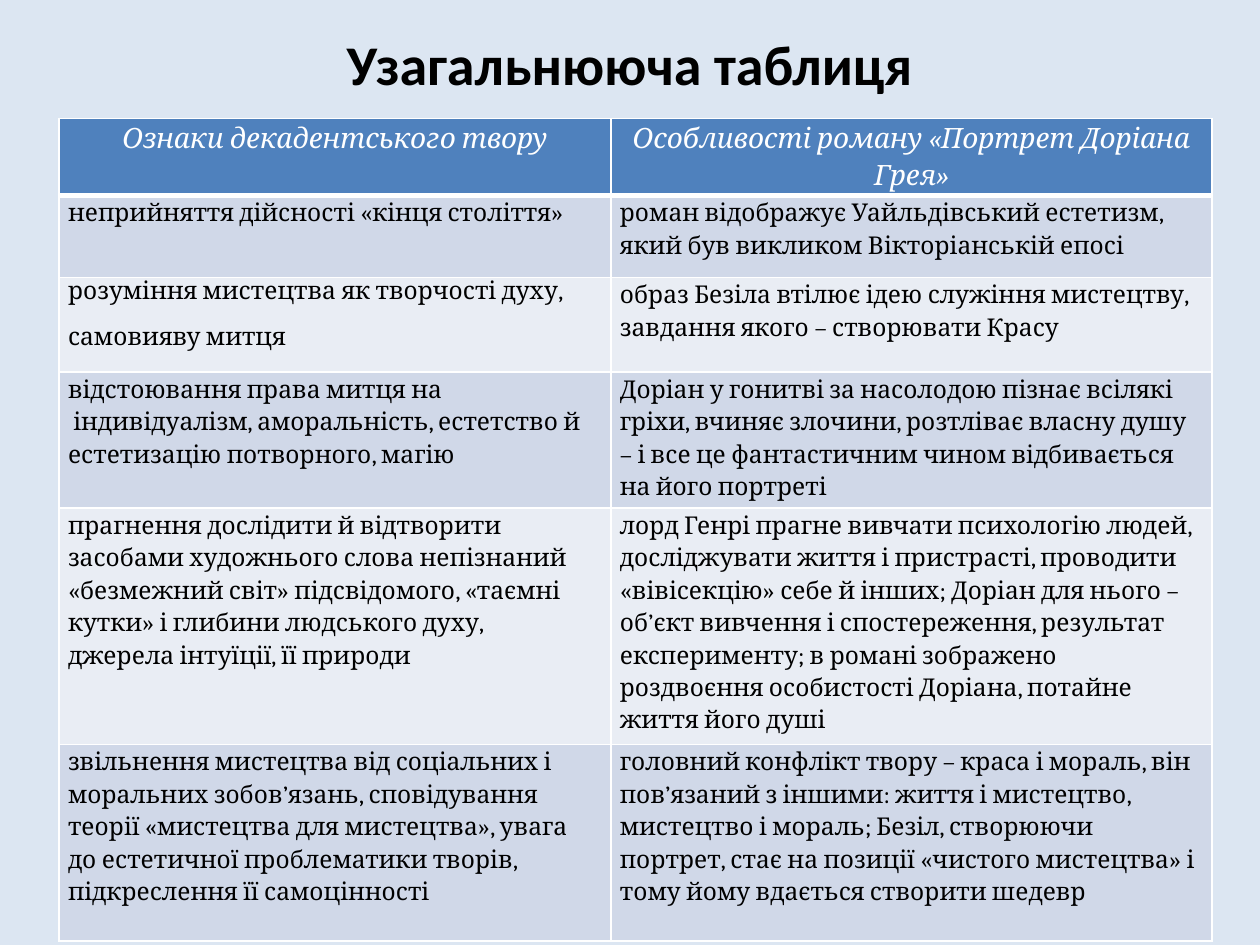
"""Builds a slide with a summary table on decadent writing."""
from dataclasses import dataclass

from lxml.etree import SubElement
from pptx import Presentation
from pptx.dml.color import RGBColor
from pptx.enum.text import MSO_ANCHOR, PP_ALIGN
from pptx.oxml.ns import qn
from pptx.util import Inches, Pt

LOOSE = {"space_after": Pt(10)}
TIGHT = {"line_spacing": 1.15}
SPACED = {**TIGHT, **LOOSE}

HEADINGS = ["Ознаки декадентського твору", "Особливості роману «Портрет Доріана Грея»"]
ROWS = [
    (["неприйняття дійсності «кінця століття»"], SPACED,
     "роман відображує Уайльдівський естетизм, який був викликом Вікторіанській епосі"),
    (["розуміння мистецтва як творчості духу,", "самовияву митця"], LOOSE,
     "образ Безіла втілює ідею служіння мистецтву, завдання якого – створювати Красу"),
    (["відстоювання права митця на",
      " індивідуалізм, аморальність, естетство й",
      "естетизацію потворного, магію"], TIGHT,
     "Доріан у гонитві за насолодою пізнає всілякі гріхи, вчиняє злочини, розтліває "
     "власну душу – і все це фантастичним чином відбивається на його портреті"),
    (["прагнення дослідити й відтворити",
      "засобами художнього слова непізнаний",
      "«безмежний світ» підсвідомого, «таємні",
      "кутки» і глибини людського духу,",
      "джерела інтуїції, її природи"], TIGHT,
     "лорд Генрі прагне вивчати психологію людей, досліджувати життя і пристрасті, "
     "проводити «вівісекцію» себе й інших; Доріан для нього – об’єкт вивчення і "
     "спостереження, результат експерименту; в романі зображено роздвоєння "
     "особистості Доріана, потайне життя його душі"),
    (["звільнення мистецтва від соціальних і",
      "моральних зобов’язань, сповідування",
      "теорії «мистецтва для мистецтва», увага",
      "до естетичної проблематики творів,",
      "підкреслення її самоцінності"], TIGHT,
     "головний конфлікт твору – краса і мораль, він пов’язаний з іншими: життя і "
     "мистецтво, мистецтво і мораль; Безіл, створюючи портрет, стає на позиції "
     "«чистого мистецтва» і тому йому вдається створити шедевр"),
]


@dataclass(frozen=True)
class Theme:
    background: str = "DCE6F2"
    header: str = "4F81BD"
    bands: tuple = ("D0D8E8", "E9EDF4")
    light: str = "FFFFFF"
    dark: str = "000000"
    title_font: str = "Calibri"
    table_font: str = "Cambria"
    title_size: int = 32
    header_size: int = 16
    body_size: int = 14
    rule: int = 1
    header_rule: int = 3


class SlideBuilder:
    def __init__(self, slide, theme):
        self.slide = slide
        self.theme = theme
        self.paint(slide.background.fill, theme.background)

    def paint(self, fill, color):
        fill.solid()
        fill.fore_color.rgb = RGBColor.from_string(color)

    def text(self, frame, lines, color, font, layout, hanging=0):
        for index, line in enumerate(lines):
            paragraph = frame.paragraphs[0] if index == 0 else frame.add_paragraph()
            paragraph.text = line
            if hanging:
                properties = paragraph._p.get_or_add_pPr()
                properties.set("marL", str(Inches(hanging)))
                properties.set("indent", str(-Inches(hanging)))
            for name, value in layout.items():
                setattr(paragraph, name, value)
            for name, value in font.items():
                setattr(paragraph.font, name, value)
            paragraph.font.color.rgb = RGBColor.from_string(color)

    def title(self, wording, left, top, width, height):
        frame = self.slide.shapes.add_textbox(
            Inches(left), Inches(top), Inches(width), Inches(height)).text_frame
        frame.word_wrap = True
        frame.vertical_anchor = MSO_ANCHOR.MIDDLE
        font = {"name": self.theme.title_font, "size": Pt(self.theme.title_size),
                "bold": True}
        self.text(frame, [wording], self.theme.dark, font,
                  {"alignment": PP_ALIGN.CENTER})

    def borders(self, cell, bottom):
        properties = cell._tc.get_or_add_tcPr()
        rule = self.theme.rule
        for side, width in {"L": rule, "R": rule, "T": rule, "B": bottom}.items():
            line = SubElement(properties, qn(f"a:ln{side}"), w=str(Pt(width)))
            fill = SubElement(line, qn("a:solidFill"))
            SubElement(fill, qn("a:srgbClr"), val=self.theme.light)

    def cell(self, cell, lines, fill, color, font, layout, hanging=0, bottom=1):
        margins = {"margin_left": 0.07, "margin_right": 0.07,
                   "margin_top": 0, "margin_bottom": 0}
        for name, value in margins.items():
            setattr(cell, name, Inches(value))
        self.borders(cell, bottom)
        self.paint(cell.fill, fill)
        self.text(cell.text_frame, lines, color, font, layout, hanging)

    def table(self, headings, rows, left, top, widths, heights):
        theme = self.theme
        table = self.slide.shapes.add_table(
            len(heights), len(widths), Inches(left), Inches(top),
            Inches(sum(widths)), Inches(sum(heights))).table
        for column, width in zip(table.columns, widths):
            column.width = Inches(width)
        for row, height in zip(table.rows, heights):
            row.height = Inches(height)

        header_font = {"name": theme.table_font, "size": Pt(theme.header_size),
                       "bold": False, "italic": True}
        body_font = {"name": theme.table_font, "size": Pt(theme.body_size)}
        for column, heading in enumerate(headings):
            self.cell(table.cell(0, column), [heading], theme.header, theme.light,
                      header_font, {**SPACED, "alignment": PP_ALIGN.CENTER},
                      bottom=theme.header_rule)
        for index, (features, layout, example) in enumerate(rows):
            band = theme.bands[index % 2]
            self.cell(table.cell(index + 1, 0), features, band, theme.dark,
                      body_font, layout, hanging=0.38)
            self.cell(table.cell(index + 1, 1), [example], band, theme.dark,
                      body_font, SPACED)


def main():
    presentation = Presentation()
    presentation.slide_width = Inches(10)
    presentation.slide_height = Inches(7.5)
    slide = presentation.slides.add_slide(presentation.slide_layouts[6])
    builder = SlideBuilder(slide, Theme())
    builder.title("Узагальнююча таблиця", 0.5, 0.3, 9, 0.4)
    builder.table(HEADINGS, ROWS, 0.47, 0.94, widths=[4.38, 4.77],
                  heights=[0.49, 0.65, 0.75, 1.08, 1.56, 1.56])
    presentation.save("out.pptx")


if __name__ == "__main__":
    main()
